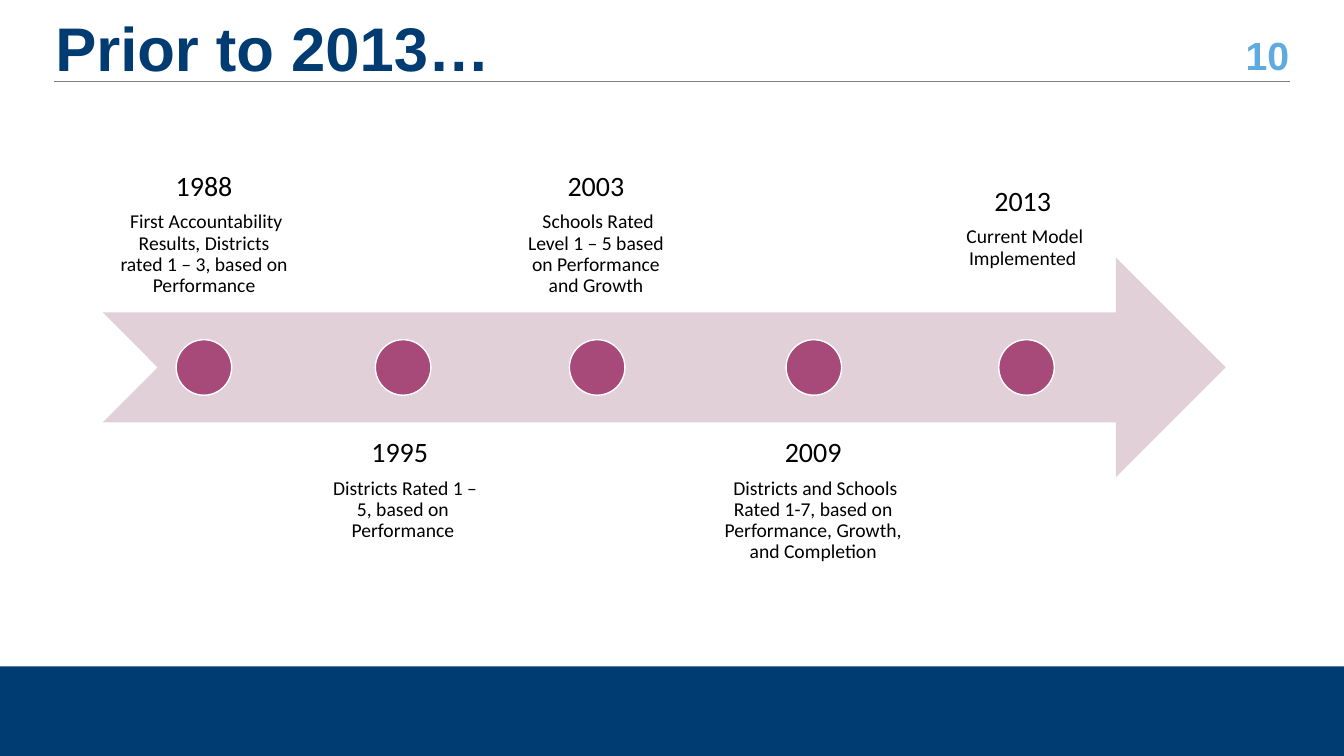
from dataclasses import dataclass

from lxml.etree import SubElement
from pptx import Presentation
from pptx.dml.color import RGBColor
from pptx.enum.shapes import MSO_CONNECTOR, MSO_SHAPE
from pptx.enum.text import MSO_ANCHOR, MSO_AUTO_SIZE, PP_ALIGN
from pptx.oxml.ns import qn
from pptx.util import Cm, Pt


@dataclass(frozen=True)
class Theme:
    navy: str = "003B71"
    sky: str = "5FAADE"
    grey: str = "808080"
    blush: str = "E1D0D7"
    plum: str = "A74979"
    white: str = "FFFFFF"
    black: str = "000000"
    heading_font: str = "Arial"
    body_font: str = "Calibri"
    title_size: int = 44
    number_size: int = 28
    year_size: int = 20
    detail_size: int = 14


@dataclass(frozen=True)
class Milestone:
    year: str
    detail: str
    dot_center: float
    left: float
    top: float
    width: float
    height: float
    anchor: MSO_ANCHOR


THEME = Theme()
ABOVE, BELOW = MSO_ANCHOR.BOTTOM, MSO_ANCHOR.TOP
DOT_SIZE = 1.4
AXIS = 9.26
MILESTONES = [
    Milestone("1988", " First Accountability Results, Districts rated 1 – 3, based on Performance",
              5.14, 2.59, 2.34, 5.11, 5.54, ABOVE),
    Milestone("1995 ", " Districts Rated 1 – 5, based on Performance",
              10.16, 7.87, 10.64, 4.57, 5.54, BELOW),
    Milestone("2003", " Schools Rated Level 1 – 5 based on Performance and Growth",
              15.05, 12.62, 2.34, 4.8, 5.54, ABOVE),
    Milestone("2009", " Districts and Schools Rated 1-7, based on Performance, Growth, and Completion",
              20.51, 17.6, 10.64, 5.79, 5.54, BELOW),
    Milestone("2013", " Current Model Implemented",
              25.87, 23.55, 3.84, 4.45, 3.35, ABOVE),
]


def write(para, text, *, size, color, font, bold=False, align=PP_ALIGN.LEFT, spacing=1.0, after=0):
    para.alignment = align
    para.line_spacing = spacing
    para.space_before = Pt(0)
    para.space_after = Pt(after)
    span = para.add_run()
    span.text = text
    span.font.size = Pt(size)
    span.font.name = font
    span.font.bold = bold
    span.font.color.rgb = RGBColor.from_string(color)


def add_box(page, left, top, width, height, anchor, inset):
    box = page.shapes.add_textbox(Cm(left), Cm(top), Cm(width), Cm(height))
    frame = box.text_frame
    frame.word_wrap = True
    frame.vertical_anchor = anchor
    frame.margin_left = frame.margin_right = Cm(inset)
    frame.margin_top = frame.margin_bottom = Cm(inset)
    return frame


def add_filled(page, kind, left, top, width, height, fill, outline=None):
    shape = page.shapes.add_shape(kind, Cm(left), Cm(top), Cm(width), Cm(height))
    shape.shadow.inherit = False
    shape.fill.solid()
    shape.fill.fore_color.rgb = RGBColor.from_string(fill)
    if outline:
        shape.line.color.rgb = RGBColor.from_string(outline)
        shape.line.width = Pt(1)
    else:
        shape.line.fill.background()


def add_rule(page, left, right, height):
    rule = page.shapes.add_connector(MSO_CONNECTOR.STRAIGHT, Cm(left), Cm(height), Cm(right), Cm(height))
    rule.line.color.rgb = RGBColor.from_string(THEME.grey)
    rule.line.width = Pt(0.5)
    SubElement(rule.element.spPr, qn("a:effectLst"))


def set_title(page, text):
    title = page.shapes.title
    title.left, title.top, title.width, title.height = Cm(1.14), Cm(0.76), Cm(29.46), Cm(1.07)
    frame = title.text_frame
    frame.auto_size = MSO_AUTO_SIZE.NONE
    frame.vertical_anchor = MSO_ANCHOR.MIDDLE
    write(frame.paragraphs[0], text, size=THEME.title_size, color=THEME.navy,
          font=THEME.heading_font, bold=True, spacing=0.9)


def add_page_number(page, number):
    frame = add_box(page, 30.66, 0.84, 2.03, 1.07, MSO_ANCHOR.MIDDLE, 0.2)
    write(frame.paragraphs[0], number, size=THEME.number_size, color=THEME.sky,
          font=THEME.heading_font, bold=True, align=PP_ALIGN.RIGHT)


def add_milestone(page, milestone):
    add_filled(page, MSO_SHAPE.OVAL, milestone.dot_center - DOT_SIZE / 2, AXIS - DOT_SIZE / 2,
               DOT_SIZE, DOT_SIZE, THEME.plum, THEME.white)
    frame = add_box(page, milestone.left, milestone.top, milestone.width, milestone.height,
                    milestone.anchor, 0.4)
    style = dict(color=THEME.black, font=THEME.body_font, align=PP_ALIGN.CENTER, spacing=0.9)
    write(frame.paragraphs[0], milestone.year, size=THEME.year_size, after=7, **style)
    write(frame.add_paragraph(), milestone.detail, size=THEME.detail_size, **style)


def main():
    deck = Presentation()
    deck.slide_width, deck.slide_height = Cm(33.87), Cm(19.05)
    page = deck.slides.add_slide(deck.slide_layouts.get_by_name("Title Only"))
    set_title(page, "Prior to 2013…")
    add_filled(page, MSO_SHAPE.RECTANGLE, 0, 16.79, 33.87, 2.26, THEME.navy)
    add_page_number(page, "10")
    add_rule(page, 1.37, 32.51, 2.04)
    add_filled(page, MSO_SHAPE.NOTCHED_RIGHT_ARROW, 2.59, 6.49, 28.3, 5.54, THEME.blush)
    for milestone in MILESTONES:
        add_milestone(page, milestone)
    deck.save("out.pptx")


if __name__ == "__main__":
    main()
